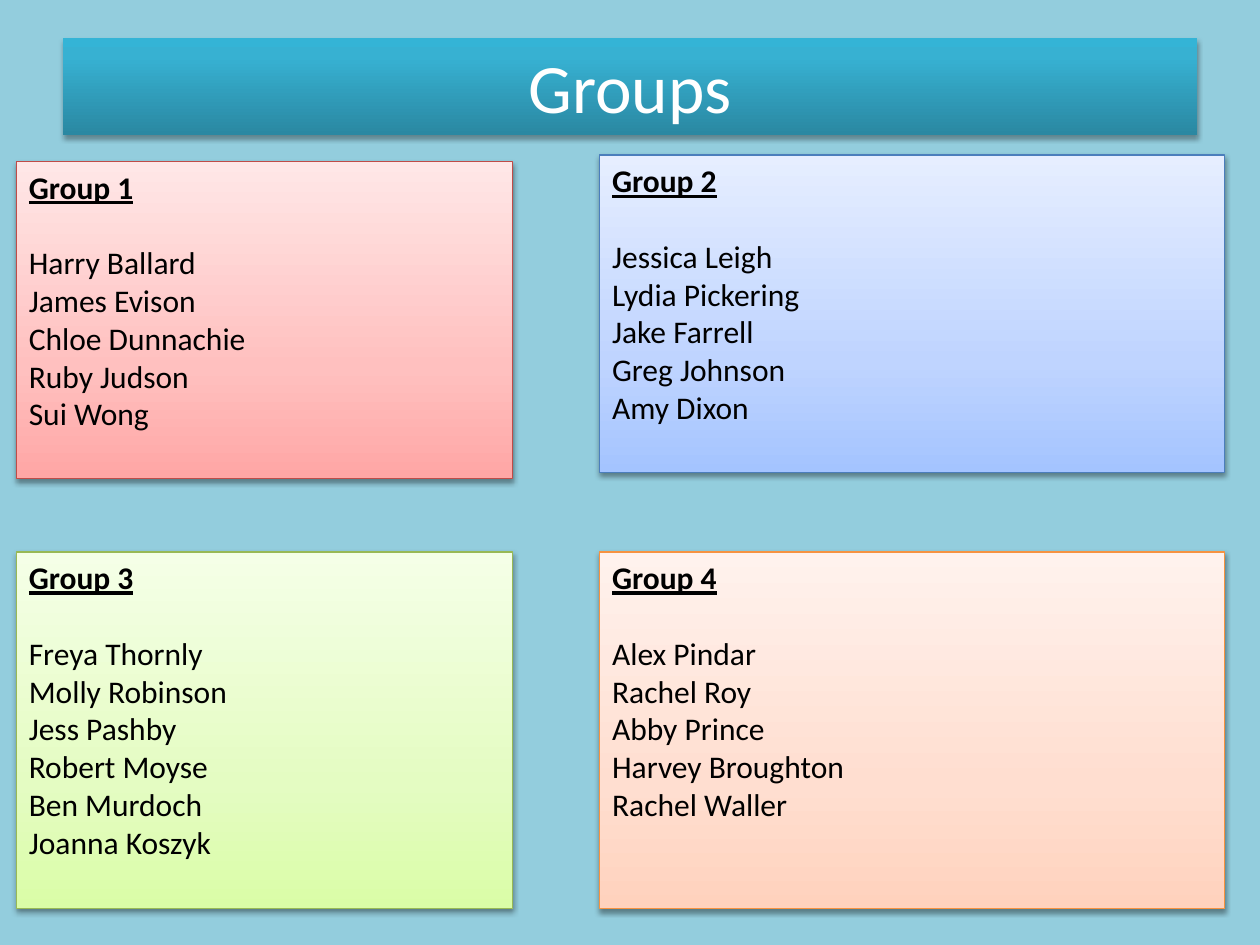
from dataclasses import dataclass

from lxml.etree import SubElement
from pptx import Presentation
from pptx.dml.color import RGBColor
from pptx.enum.shapes import MSO_SHAPE as Preset
from pptx.enum.text import MSO_ANCHOR as Anchor, PP_ALIGN as Align
from pptx.oxml.ns import qn
from pptx.util import Pt


@dataclass(frozen=True)
class Theme:
    """Colours, type sizes and shadow settings of the slide."""
    font: str = "Calibri"
    title_size: float = 39.6
    body_size: float = 18
    heading_gap: float = 21.6
    background: str = "93CDDD"
    title_text: str = "FFFFFF"
    body_text: str = "000000"
    title_fill: tuple = ((0, "2A88A2"), (80, "37B1D2"), (100, "34B4D6"))
    red: tuple = ("BF4C48", ((0, "FFA6A5"), (35, "FFC0BF"), (100, "FFE7E7")))
    blue: tuple = ("4B7EBC", ((0, "A4C4FF"), (35, "BFD4FF"), (100, "E6EEFF")))
    green: tuple = ("98B955", ((0, "DAFDA7"), (35, "E4FCC2"), (100, "F5FFE7")))
    orange: tuple = ("F69240", ((0, "FFD2BD"), (35, "FFDED0"), (100, "FFF2ED")))
    title_shadow: tuple = (35, 1.8)
    card_shadow: tuple = (38, 1.6)
    shadow_blur: float = 3.1


THEME = Theme()
LEFT, RIGHT = (9.4, 283.7), (342.7, 357.1)
GROUPS = (
    ("Group 1", THEME.red, LEFT, (92.2, 181.4),
     ("Harry Ballard", "James Evison", "Chloe Dunnachie", "Ruby Judson", "Sui Wong")),
    ("Group 2", THEME.blue, RIGHT, (88.6, 181.4),
     ("Jessica Leigh", "Lydia Pickering", "Jake Farrell", "Greg Johnson", "Amy Dixon")),
    ("Group 3", THEME.green, LEFT, (315.4, 203.8),
     ("Freya Thornly", "Molly Robinson", "Jess Pashby", "Robert Moyse",
      "Ben Murdoch", "Joanna Koszyk")),
    ("Group 4", THEME.orange, RIGHT, (315.4, 203.8),
     ("Alex Pindar", "Rachel Roy", "Abby Prince", "Harvey Broughton", "Rachel Waller")),
)


def add_color(parent, color, **attributes):
    """Add an RGB colour element and return it."""
    return SubElement(parent, qn("a:srgbClr"), val=color, **attributes)


def set_gradient(shape, stops):
    """Fill a shape with a vertical gradient that starts at the bottom."""
    shape.fill.gradient()
    shape.fill.gradient_angle = 90
    stop_list = shape.element.spPr.find(".//" + qn("a:gsLst"))
    for stop in list(stop_list):
        stop_list.remove(stop)
    for position, color in stops:
        add_color(SubElement(stop_list, qn("a:gs"), pos=str(position * 1000)), color)


def set_shadow(shape, opacity, distance):
    """Give a shape a soft black shadow below it."""
    shape.shadow.inherit = False
    effects = shape.element.spPr.find(qn("a:effectLst"))
    shadow = SubElement(effects, qn("a:outerShdw"), blurRad=str(Pt(THEME.shadow_blur)),
                        dist=str(Pt(distance)), dir="5400000", rotWithShape="0")
    SubElement(add_color(shadow, "000000"), qn("a:alpha"), val=str(opacity * 1000))


def add_panel(slide, column, row, stops, shadow, outline=None, anchor=Anchor.TOP):
    """Add a gradient rectangle with a shadow and an optional outline."""
    (left, width), (top, height) = column, row
    shape = slide.shapes.add_shape(Preset.RECTANGLE, Pt(left), Pt(top), Pt(width), Pt(height))
    set_gradient(shape, stops)
    set_shadow(shape, *shadow)
    if outline:
        shape.line.color.rgb = RGBColor.from_string(outline)
        shape.line.width = Pt(0.75)
    else:
        shape.line.fill.background()
    shape.text_frame.word_wrap = True
    shape.text_frame.vertical_anchor = anchor
    return shape


def write(paragraph, text, size=THEME.body_size, color=THEME.body_text,
          bold=False, underline=False, align=Align.LEFT, after=0):
    """Write formatted text into a paragraph."""
    paragraph.alignment = align
    paragraph.space_after = Pt(after)
    run = paragraph.add_run()
    run.text = text
    run.font.name = THEME.font
    run.font.size = Pt(size)
    run.font.bold = bold
    run.font.underline = underline
    run.font.color.rgb = RGBColor.from_string(color)


def add_title(slide, text):
    """Add the title banner."""
    banner = add_panel(slide, (36, 648), (21.6, 55.4), THEME.title_fill,
                       THEME.title_shadow, anchor=Anchor.MIDDLE)
    write(banner.text_frame.paragraphs[0], text, size=THEME.title_size,
          color=THEME.title_text, align=Align.CENTER)


def add_group(slide, heading, colors, column, row, members):
    """Add a card with a group heading and its members."""
    outline, stops = colors
    frame = add_panel(slide, column, row, stops, THEME.card_shadow, outline).text_frame
    write(frame.paragraphs[0], heading, bold=True, underline=True, after=THEME.heading_gap)
    for member in members:
        write(frame.add_paragraph(), member)


def main():
    """Build and save the slide."""
    presentation = Presentation()
    presentation.slide_width, presentation.slide_height = Pt(720), Pt(540)
    slide = presentation.slides.add_slide(presentation.slide_layouts[6])
    slide.background.fill.solid()
    slide.background.fill.fore_color.rgb = RGBColor.from_string(THEME.background)
    add_title(slide, "Groups")
    for group in GROUPS:
        add_group(slide, *group)
    presentation.save("out.pptx")


if __name__ == "__main__":
    main()
